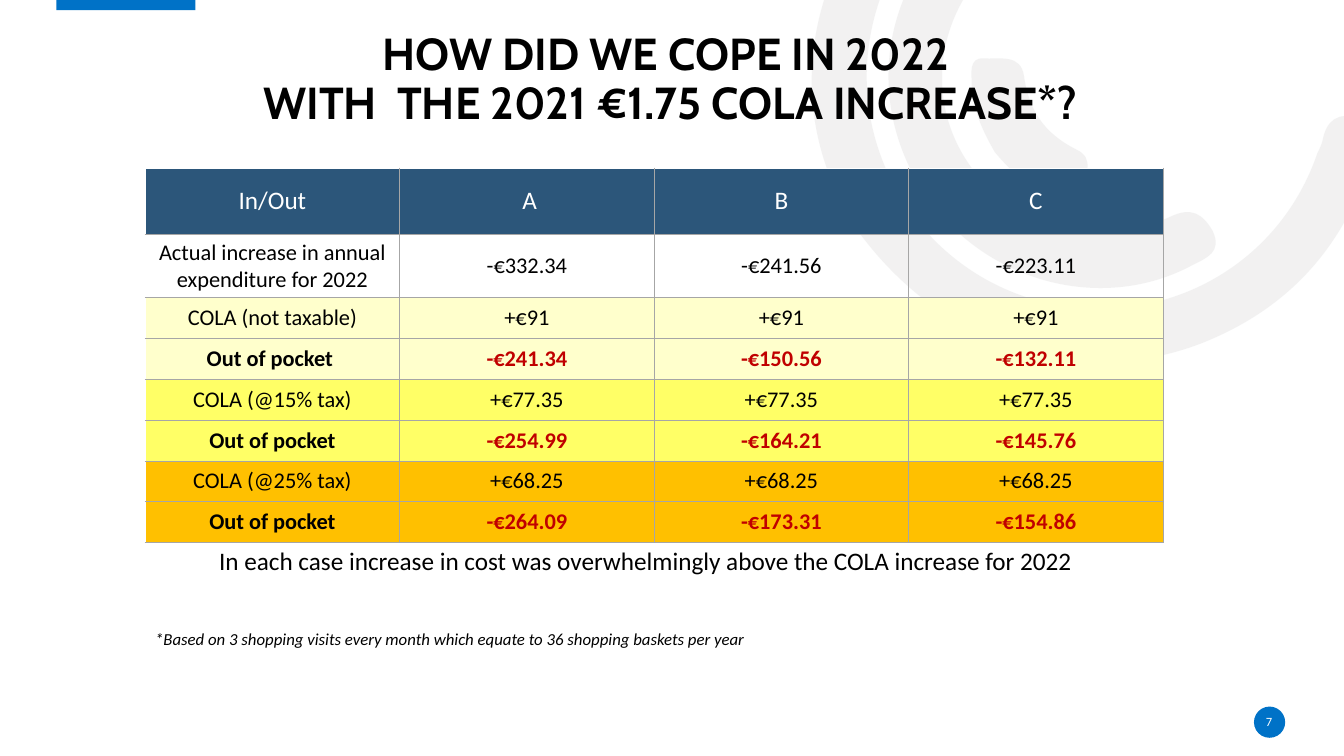
import pptx
import pptx.util
import pptx.dml.color
import pptx.enum.shapes
import pptx.enum.text
import pptx.oxml
import pptx.oxml.ns

Inches, Pt = pptx.util.Inches, pptx.util.Pt
RGBColor = pptx.dml.color.RGBColor
SHAPE = pptx.enum.shapes.MSO_SHAPE
ALIGN = pptx.enum.text.PP_ALIGN
ANCHOR = pptx.enum.text.MSO_ANCHOR
qn, nsdecls = pptx.oxml.ns.qn, pptx.oxml.ns.nsdecls

BLACK = RGBColor(0x00, 0x00, 0x00)
WHITE = RGBColor(0xFF, 0xFF, 0xFF)
BLUE = RGBColor(0x00, 0x72, 0xC7)
NAVY = RGBColor(0x2C, 0x56, 0x7A)
RED = RGBColor(0xC0, 0x00, 0x00)
CREAM = RGBColor(0xFF, 0xFF, 0xCC)
YELLOW = RGBColor(0xFF, 0xFF, 0x66)
AMBER = RGBColor(0xFF, 0xC0, 0x00)
GRID = RGBColor(0xA6, 0xA6, 0xA6)
PALE = RGBColor(0xE7, 0xE6, 0xE6)


def write(frame, text, size, color, align=ALIGN.CENTER, font="Calibri", bold=False, italic=False):
    frame.word_wrap = True
    frame.text = text
    paragraph = frame.paragraphs[0]
    paragraph.alignment = align
    for run in paragraph.runs:
        run.font.name, run.font.size = font, Pt(size)
        run.font.bold, run.font.italic = bold, italic
        run.font.color.rgb = color
    return paragraph


def add_text(left, top, width, height, text, size, color, margins=True, anchor=ANCHOR.TOP, **style):
    box = slide.shapes.add_textbox(Inches(left), Inches(top), Inches(width), Inches(height))
    frame = box.text_frame
    frame.vertical_anchor = anchor
    if not margins:
        frame.margin_left = frame.margin_right = frame.margin_top = frame.margin_bottom = 0
    return write(frame, text, size, color, **style)


prs = pptx.Presentation()
prs.slide_width, prs.slide_height = Inches(40 / 3), Inches(7.5)
slide = prs.slides.add_slide(prs.slide_layouts[6])

# Background arcs: a start point, then cubic curves as (control, control, end)
arcs = [
    [(8.51, 2.29),
     (7.99, 1.49), (7.87, 0.5), (8.38, -0.5), (8.9, -1.52), (9.76, -2.03), (10.9, -2.07),
     (11.05, -2.07), (11.21, -2.1), (11.31, -1.95), (11.44, -1.75), (11.27, -1.54), (10.98, -1.54),
     (9.67, -1.54), (8.65, -0.59), (8.6, 0.68), (8.56, 1.81), (9.36, 2.81), (10.46, 3.02),
     (11.6, 3.24), (12.7, 2.61), (13.07, 1.52), (13.09, 1.48), (13.11, 1.44), (13.12, 1.4),
     (13.16, 1.19), (13.27, 1.11), (13.49, 1.17), (13.73, 1.24), (13.67, 1.41), (13.61, 1.56),
     (13.34, 2.45), (12.78, 3.07), (11.91, 3.41), (10.7, 3.87), (9.36, 3.45), (8.51, 2.29)],
    [(9.22, 1.99),
     (8.62, 1.15), (8.69, 0.07), (9.4, -0.68), (9.51, -0.79), (9.62, -0.95), (9.8, -0.78),
     (9.95, -0.64), (9.97, -0.5), (9.79, -0.32), (9.25, 0.26), (9.2, 1.08), (9.65, 1.68),
     (10.08, 2.29), (10.88, 2.49), (11.61, 2.15), (11.82, 2.05), (11.93, 2.12), (12.03, 2.29),
     (12.13, 2.5), (11.97, 2.56), (11.83, 2.63), (10.96, 3.1), (9.83, 2.82), (9.22, 1.99)],
    [(9.87, 1.51),
     (9.75, 1.3), (9.64, 1.07), (9.64, 0.82), (9.64, 0.73), (9.61, 0.57), (9.76, 0.58),
     (9.92, 0.59), (10.13, 0.53), (10.16, 0.76), (10.21, 1.1), (10.36, 1.32), (10.67, 1.48),
     (10.88, 1.57), (10.76, 1.76), (10.72, 1.89), (10.68, 2.06), (10.55, 1.98), (10.45, 1.94),
     (10.21, 1.87), (10.03, 1.7), (9.87, 1.51)],
]
for points in arcs:
    start, *controls = [(Inches(x), Inches(y)) for x, y in points]
    outline = slide.shapes.build_freeform(*start)
    outline.add_line_segments(controls, close=True)
    arc = outline.convert_to_shape()
    arc.shadow.inherit = False
    arc.line.fill.background()
    arc.fill.solid()
    arc.fill.fore_color.rgb = PALE
    properties = arc.element.spPr
    tint = properties.find(qn("a:solidFill")).find(qn("a:srgbClr"))
    tint.append(pptx.oxml.parse_xml(f'<a:alpha {nsdecls("a")} val="53000"/>'))
    # Join every three segments into one cubic curve
    segments = list(properties.iter(qn("a:lnTo")))
    for i in range(0, len(segments), 3):
        curve = pptx.oxml.parse_xml(f'<a:cubicBezTo {nsdecls("a")}/>')
        segments[i].addprevious(curve)
        for segment in segments[i:i + 3]:
            curve.append(segment[0])
            segment.getparent().remove(segment)

# Top tab and page number disc
for preset, left, top, width, height in [(SHAPE.RECTANGLE, 0.56, -0.02, 1.38, 0.12),
                                         (SHAPE.OVAL, 12.44, 7.01, 0.31, 0.31)]:
    accent = slide.shapes.add_shape(preset, Inches(left), Inches(top), Inches(width), Inches(height))
    accent.shadow.inherit = False
    accent.line.fill.background()
    accent.fill.solid()
    accent.fill.fore_color.rgb = BLUE

# Title
title = add_text(0.56, 0.27, 12.19, 1.01,
                 "HOW DID WE COPE IN 2022 \vWITH  THE 2021 €1.75 COLA INCREASE*?", 32, BLACK,
                 margins=False, anchor=ANCHOR.BOTTOM, font="Cabin", bold=True)
title.line_spacing = 0.9

# Cost table
rows = [
    (NAVY, ["In/Out", " A", "B", "C"]),
    (None, ["Actual increase in annual expenditure for 2022", "-€332.34", "-€241.56", "-€223.11"]),
    (CREAM, ["COLA (not taxable)", "+€91", "+€91", "+€91"]),
    (CREAM, ["Out of pocket ", "-€241.34", "-€150.56", "-€132.11"]),
    (YELLOW, ["COLA (@15% tax)", "+€77.35", "+€77.35", "+€77.35"]),
    (YELLOW, ["Out of pocket", "-€254.99", "-€164.21", "-€145.76"]),
    (AMBER, ["COLA (@25% tax)", "+€68.25", "+€68.25", "+€68.25"]),
    (AMBER, ["Out of pocket", "-€264.09", "-€173.31", "-€154.86"]),
]
table_frame = slide.shapes.add_table(len(rows), 4, Inches(1.44), Inches(1.67), Inches(10.1), Inches(3.71))
costs = table_frame.table
costs.horz_banding = False
for column in costs.columns:
    column.width = Inches(10.1 / 4)
for r, (fill, texts) in enumerate(rows):
    costs.rows[r].height = Inches(0.65 if r == 0 else 2.43 / 6)
    total = texts[0].startswith("Out of pocket")
    for c, text in enumerate(texts):
        cell = costs.cell(r, c)
        cell.vertical_anchor = ANCHOR.MIDDLE
        color = WHITE if r == 0 else RED if total and c else BLACK
        write(cell.text_frame, text, 18 if r == 0 else 16, color, bold=total)
        # White outer edge on the left and top, grey grid elsewhere
        for side in "LRTB":
            outer = (side == "L" and c == 0) or (side == "T" and r == 0)
            edge, weight = (WHITE, Pt(1)) if outer else (GRID, Pt(0.5))
            cell._tc.get_or_add_tcPr().append(pptx.oxml.parse_xml(
                f'<a:ln{side} {nsdecls("a")} w="{weight}"><a:solidFill>'
                f'<a:srgbClr val="{edge}"/></a:solidFill></a:ln{side}>'))
        if fill is None:
            cell.fill.background()
        else:
            cell.fill.solid()
            cell.fill.fore_color.rgb = fill
table_frame.height = Inches(3.71)

# Page number, footnote and conclusion
add_text(12.43, 7.06, 0.32, 0.2, "7", 9, WHITE, margins=False, anchor=ANCHOR.MIDDLE)
add_text(1.44, 6.19, 7.61, 0.5,
         "*Based on 3 shopping visits every month which equate to 36 shopping baskets per year",
         12, BLACK, align=ALIGN.LEFT, italic=True)
add_text(1.27, 5.36, 10.27, 0.4,
         "In each case increase in cost was overwhelmingly above the COLA increase for 2022", 18, BLACK)

prs.save("out.pptx")
